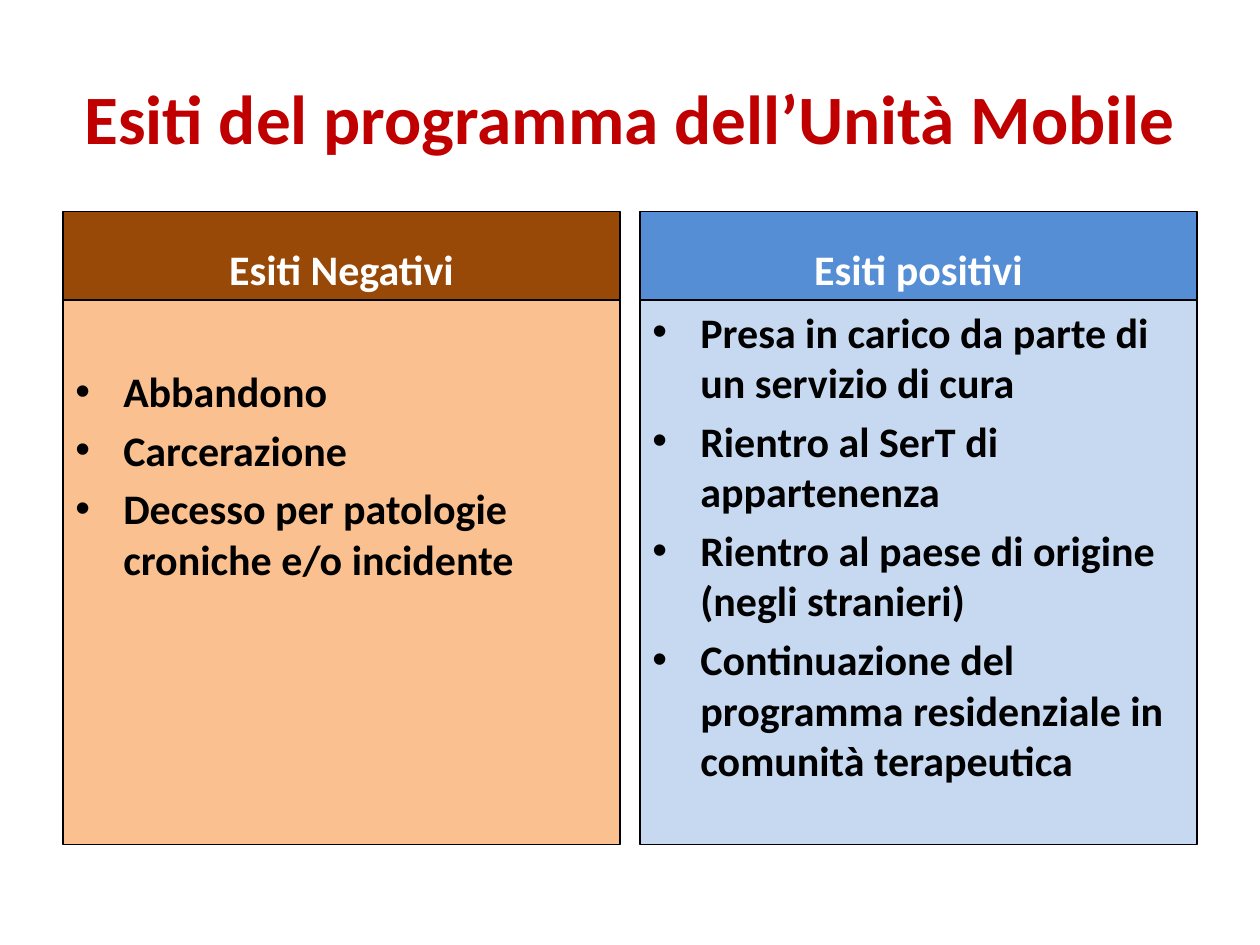
from lxml import etree
from pptx import Presentation
from pptx.dml.color import RGBColor
from pptx.enum.shapes import MSO_SHAPE as Shape
from pptx.enum.text import MSO_ANCHOR as Anchor, PP_ALIGN as Align
from pptx.oxml.ns import qn
from pptx.util import Inches, Pt

COLORS = {
    "title": "C00000", "heading": "FFFFFF", "text": "000000", "line": "000000",
    "negative_dark": "984807", "negative_light": "FAC090",
    "positive_dark": "558ED5", "positive_light": "C6D9F1",
}
TITLE = "Esiti del programma dell’Unità Mobile"
OUTCOMES = [
    ("negative", "Esiti Negativi", 0.52, [
        "Abbandono",
        "Carcerazione",
        "Decesso per patologie croniche e/o incidente",
    ]),
    ("positive", "Esiti positivi", 0.05, [
        "Presa in carico da parte di un servizio di cura",
        "Rientro al SerT di appartenenza",
        "Rientro al paese di origine (negli stranieri)",
        "Continuazione del programma residenziale in comunità terapeutica",
    ]),
]


def color(key):
    """Return the named palette colour."""
    return RGBColor.from_string(COLORS[key])


def apply_format(target, values):
    """Set each attribute in values on the target."""
    for name, value in values.items():
        setattr(target, name, value)


def add_bullet(paragraph):
    """Give the paragraph a hanging round bullet."""
    properties = paragraph._p.get_or_add_pPr()
    properties.set("marL", str(Inches(0.38)))
    properties.set("indent", str(-Inches(0.38)))
    etree.SubElement(properties, qn("a:buFont")).set("typeface", "Arial")
    etree.SubElement(properties, qn("a:buChar")).set("char", "•")


def write(frame, lines, ink, size=24, align=Align.CENTER, bulleted=False, **frame_format):
    """Fill the text frame with one bold paragraph per line."""
    apply_format(frame, {"word_wrap": True, **frame_format})
    for index, line in enumerate(lines):
        paragraph = frame.add_paragraph() if index else frame.paragraphs[0]
        if bulleted:
            add_bullet(paragraph)
        spacing = Pt(4.8 if index else 0)
        apply_format(paragraph, {"text": line, "alignment": align, "space_before": spacing})
        apply_format(paragraph.font, {"name": "Calibri", "size": Pt(size), "bold": True})
        paragraph.font.color.rgb = color(ink)


def add_panel(slide, box, fill):
    """Add an outlined rectangle and return its text frame."""
    panel = slide.shapes.add_shape(Shape.RECTANGLE, *map(Inches, box))
    panel.shadow.inherit = False
    panel.fill.solid()
    panel.fill.fore_color.rgb = color(fill)
    panel.line.color.rgb = color("line")
    panel.line.width = Pt(0.75)
    return panel.text_frame


def add_title(slide, box):
    """Add the slide title in the box."""
    title = slide.shapes.add_textbox(*map(Inches, box))
    write(title.text_frame, [TITLE], "title", size=39.6, vertical_anchor=Anchor.MIDDLE)


def add_outcome(slide, box, tone, heading, top_margin, items):
    """Add a heading band with its bulleted panel below."""
    left, top, width, height = box
    band = 0.7
    header = add_panel(slide, (left, top, width, band), f"{tone}_dark")
    write(header, [heading], "heading", vertical_anchor=Anchor.BOTTOM)
    body = add_panel(slide, (left, top + band, width, height - band), f"{tone}_light")
    write(body, items, "text", align=Align.LEFT, bulleted=True,
          vertical_anchor=Anchor.TOP, margin_top=Inches(top_margin))


def main():
    """Build and save the slide."""
    deck = Presentation()
    apply_format(deck, {"slide_width": Inches(10), "slide_height": Inches(7.5)})
    slide = deck.slides.add_slide(deck.slide_layouts[6])
    margin, width, gap = 0.5, 4.42, 0.16
    add_title(slide, (margin, 0.3, 2 * width + gap, 1.25))
    for column, outcome in enumerate(OUTCOMES):
        add_outcome(slide, (margin + column * (width + gap), 1.68, width, 5.02), *outcome)
    deck.save("out.pptx")


if __name__ == "__main__":
    main()
